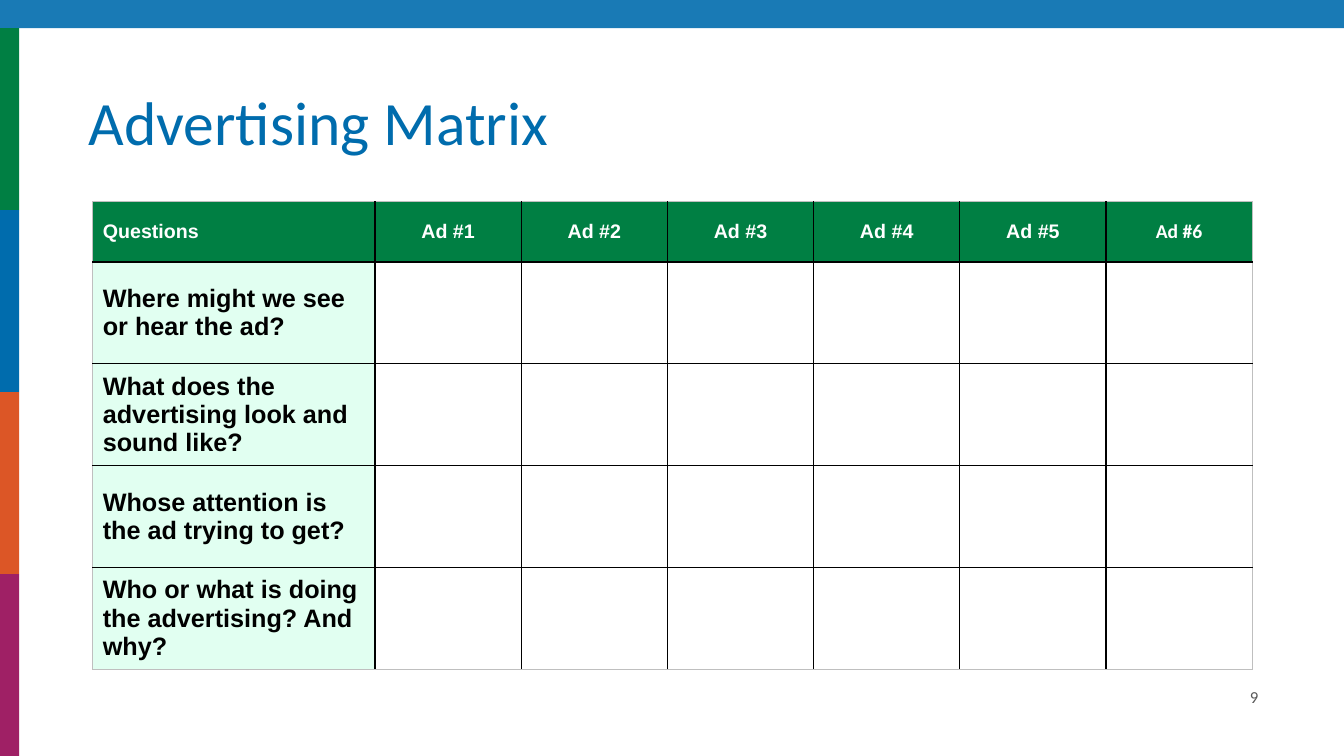
from dataclasses import dataclass

from lxml import etree
from pptx import Presentation
from pptx.dml.color import RGBColor
from pptx.enum.shapes import MSO_SHAPE
from pptx.enum.text import MSO_ANCHOR, PP_ALIGN
from pptx.oxml.ns import qn
from pptx.util import Inches, Pt

RECTANGLE = MSO_SHAPE.RECTANGLE
LEFT, CENTER, RIGHT = PP_ALIGN.LEFT, PP_ALIGN.CENTER, PP_ALIGN.RIGHT
MIDDLE, BOTTOM = MSO_ANCHOR.MIDDLE, MSO_ANCHOR.BOTTOM

BLUE = RGBColor(0x00, 0x6C, 0xAD)
GREEN = RGBColor(0x00, 0x7F, 0x43)
ORANGE = RGBColor(0xDC, 0x56, 0x26)
PURPLE = RGBColor(0x9F, 0x20, 0x65)
MINT = RGBColor(0xE1, 0xFF, 0xF1)
WHITE = RGBColor(0xFF, 0xFF, 0xFF)
BLACK = RGBColor(0x00, 0x00, 0x00)
DARK_GRAY = RGBColor(0x59, 0x59, 0x59)
LIGHT_GRAY = RGBColor(0xBF, 0xBF, 0xBF)

SLIDE_WIDTH, SLIDE_HEIGHT = 13.33, 7.5
BAND_HEIGHT = 0.28
STRIPE_WIDTH = 0.19
STRIPE_COLORS = [GREEN, BLUE, ORANGE, PURPLE]

HEADERS = ["Questions"] + [f"Ad #{number}" for number in range(1, 7)]
QUESTIONS = [
    "Where might we see or hear the ad?",
    "What does the advertising look and sound like?",
    "Whose attention is the ad trying to get?",
    "Who or what is doing the advertising? And why?",
]
QUESTION_WIDTH, AD_WIDTH = 2.8, 1.45
HEADER_HEIGHT, QUESTION_HEIGHT = 0.6, 1.01


@dataclass
class Box:
    left: float
    top: float
    width: float
    height: float

    def emu(self) -> tuple:
        return tuple(Inches(v) for v in (self.left, self.top, self.width, self.height))


@dataclass
class TextStyle:
    size: int
    color: RGBColor
    font: str = "Arial"
    bold: bool = False
    align: PP_ALIGN = LEFT


def write(text_frame, text: str, style: TextStyle) -> None:
    text_frame.text = text
    paragraph = text_frame.paragraphs[0]
    paragraph.alignment = style.align
    font = paragraph.runs[0].font
    font.name = style.font
    font.size = Pt(style.size)
    font.bold = style.bold
    font.color.rgb = style.color


def add_bar(slide, box: Box, color: RGBColor):
    shape = slide.shapes.add_shape(RECTANGLE, *box.emu())
    shape.shadow.inherit = False
    shape.fill.solid()
    shape.fill.fore_color.rgb = color
    shape.line.fill.background()
    return shape


def set_opacity(shape, percent: int) -> None:
    color = shape.fill._xPr.find(qn("a:solidFill"))[0]
    etree.SubElement(color, qn("a:alpha"), val=str(percent * 1000))


def add_text(slide, box: Box, text: str, style: TextStyle, anchor: MSO_ANCHOR):
    text_frame = slide.shapes.add_textbox(*box.emu()).text_frame
    text_frame.word_wrap = True
    text_frame.vertical_anchor = anchor
    write(text_frame, text, style)
    return text_frame


def add_borders(cell, outer_sides: dict[str, bool]) -> None:
    """Draw black lines inside the table and thin gray ones on its outer edge."""
    properties = cell._tc.get_or_add_tcPr()
    for tag, is_outer in outer_sides.items():
        color, width = (LIGHT_GRAY, 0.5) if is_outer else (BLACK, 1)
        line = etree.SubElement(properties, qn(f"a:{tag}"), w=str(Pt(width)))
        fill = etree.SubElement(line, qn("a:solidFill"))
        etree.SubElement(fill, qn("a:srgbClr"), val=str(color))


def add_matrix(slide) -> None:
    row_count, column_count = len(QUESTIONS) + 1, len(HEADERS)
    box = Box(0.92, 2, QUESTION_WIDTH + AD_WIDTH * (column_count - 1),
              HEADER_HEIGHT + QUESTION_HEIGHT * len(QUESTIONS))
    table = slide.shapes.add_table(row_count, column_count, *box.emu()).table
    for index, column in enumerate(table.columns):
        column.width = Inches(AD_WIDTH if index else QUESTION_WIDTH)
    for index, row in enumerate(table.rows):
        row.height = Inches(QUESTION_HEIGHT if index else HEADER_HEIGHT)

    for row in range(row_count):
        for column in range(column_count):
            cell = table.cell(row, column)
            cell.vertical_anchor = MIDDLE
            add_borders(cell, {
                "lnL": column == 0,
                "lnR": column == column_count - 1,
                "lnT": row == 0,
                "lnB": row == row_count - 1,
            })
            cell.fill.solid()
            if row == 0:
                cell.fill.fore_color.rgb = GREEN
                font = "Calibri" if column == column_count - 1 else "Arial"
                align = CENTER if column else LEFT
                write(cell.text_frame, HEADERS[column],
                      TextStyle(14, WHITE, font, True, align))
            elif column == 0:
                cell.fill.fore_color.rgb = MINT
                write(cell.text_frame, QUESTIONS[row - 1],
                      TextStyle(18, BLACK, bold=True))
            else:
                cell.fill.fore_color.rgb = WHITE


def main() -> None:
    presentation = Presentation()
    presentation.slide_width = Inches(SLIDE_WIDTH)
    presentation.slide_height = Inches(SLIDE_HEIGHT)
    slide = presentation.slides.add_slide(presentation.slide_layouts[6])

    band = add_bar(slide, Box(0, 0, SLIDE_WIDTH, BAND_HEIGHT), BLUE)
    set_opacity(band, 90)
    stripe_height = (SLIDE_HEIGHT - BAND_HEIGHT) / len(STRIPE_COLORS)
    for index, color in enumerate(STRIPE_COLORS):
        top = BAND_HEIGHT + index * stripe_height
        add_bar(slide, Box(0, top, STRIPE_WIDTH, stripe_height), color)

    title = add_text(slide, Box(0.78, 0.5, 11.79, 1.12), "Advertising Matrix",
                     TextStyle(44, BLUE, "Calibri"), BOTTOM)
    title.paragraphs[0].line_spacing = 0.9
    add_matrix(slide)
    add_text(slide, Box(9.42, 6.71, 3.16, 0.4), "9",
             TextStyle(12, DARK_GRAY, "Calibri", align=RIGHT), MIDDLE)

    presentation.save("out.pptx")


if __name__ == "__main__":
    main()
